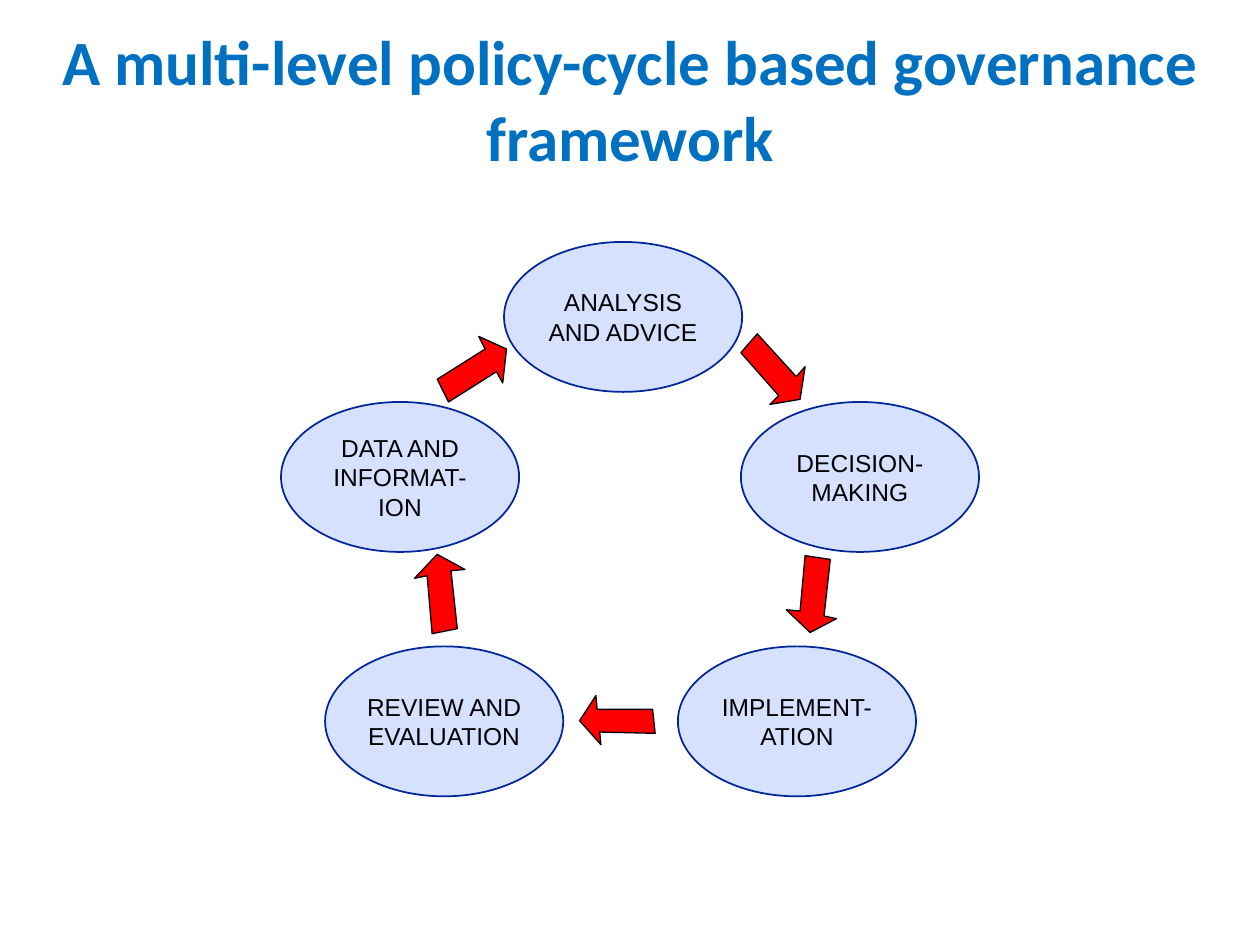
from pptx import Presentation
from pptx.dml.color import RGBColor
from pptx.enum.shapes import MSO_SHAPE
from pptx.enum.text import MSO_ANCHOR, MSO_AUTO_SIZE, PP_ALIGN
from pptx.util import Inches, Pt


def write(tf, text, size, font, color, bold=False, anchor=MSO_ANCHOR.MIDDLE):
    tf.word_wrap = True
    tf.vertical_anchor = anchor
    p = tf.paragraphs[0]
    p.alignment = PP_ALIGN.CENTER
    r = p.add_run()
    r.text = text
    r.font.size = Pt(size)
    r.font.name = font
    r.font.bold = bold
    r.font.color.rgb = RGBColor.from_string(color)


def paint(sp, fill, line, width):
    sp.shadow.inherit = False
    sp.fill.solid()
    sp.fill.fore_color.rgb = RGBColor.from_string(fill)
    sp.line.color.rgb = RGBColor.from_string(line)
    sp.line.width = Pt(width)


prs = Presentation()
prs.slide_width, prs.slide_height = Inches(10), Inches(7.5)
s = prs.slides.add_slide(prs.slide_layouts[5])

# Title
title = s.shapes.title
title.left, title.top = Inches(0), Inches(0.13)
title.width, title.height = Inches(10), Inches(1.31)
write(title.text_frame, "A multi-level policy-cycle based governance framework",
      36, "Calibri", "0070C0", bold=True, anchor=MSO_ANCHOR.TOP)
title.text_frame.auto_size = MSO_AUTO_SIZE.SHAPE_TO_FIT_TEXT

# Arrows between the stages, as outlines in inches
arrows = [
    [(6.39, 2.91), (6.32, 2.99), (6.01, 2.65), (5.88, 2.8),
     (6.18, 3.14), (6.11, 3.21), (6.35, 3.17)],
    [(6.24, 4.84), (6.35, 4.85), (6.39, 4.41), (6.59, 4.44),
     (6.54, 4.89), (6.64, 4.91), (6.43, 5.02)],
    [(4.77, 5.91), (4.76, 5.81), (5.2, 5.82), (5.18, 5.63),
     (4.74, 5.63), (4.73, 5.52), (4.6, 5.72)],
    [(3.29, 4.59), (3.39, 4.57), (3.43, 5.03), (3.63, 4.99),
     (3.58, 4.53), (3.69, 4.52), (3.47, 4.4)],
    [(3.99, 3.04), (3.94, 2.95), (3.56, 3.19), (3.47, 3.01),
     (3.85, 2.77), (3.8, 2.67), (4.02, 2.77)],
]
for outline in arrows:
    points = [(Inches(x), Inches(y)) for x, y in outline]
    builder = s.shapes.build_freeform(*points[0])
    builder.add_line_segments(points[1:], close=True)
    paint(builder.convert_to_shape(), "FF0000", "000000", 0)

# Stages of the policy cycle, clockwise from the top
stages = [
    ("ANALYSIS AND ADVICE", 4, 1.92),
    ("DECISION- MAKING", 5.88, 3.19),
    ("IMPLEMENT-ATION", 5.38, 5.13),
    ("REVIEW AND EVALUATION", 2.58, 5.13),
    ("DATA AND INFORMAT-ION", 2.23, 3.19),
]
for text, x, y in stages:
    sp = s.shapes.add_shape(MSO_SHAPE.OVAL, Inches(x), Inches(y), Inches(1.89), Inches(1.19))
    paint(sp, "D6E0FF", "002699", 1)
    tf = sp.text_frame
    tf.margin_left = tf.margin_right = tf.margin_top = tf.margin_bottom = Inches(0)
    write(tf, text, 14, "Arial", "000000")

prs.save("out.pptx")
